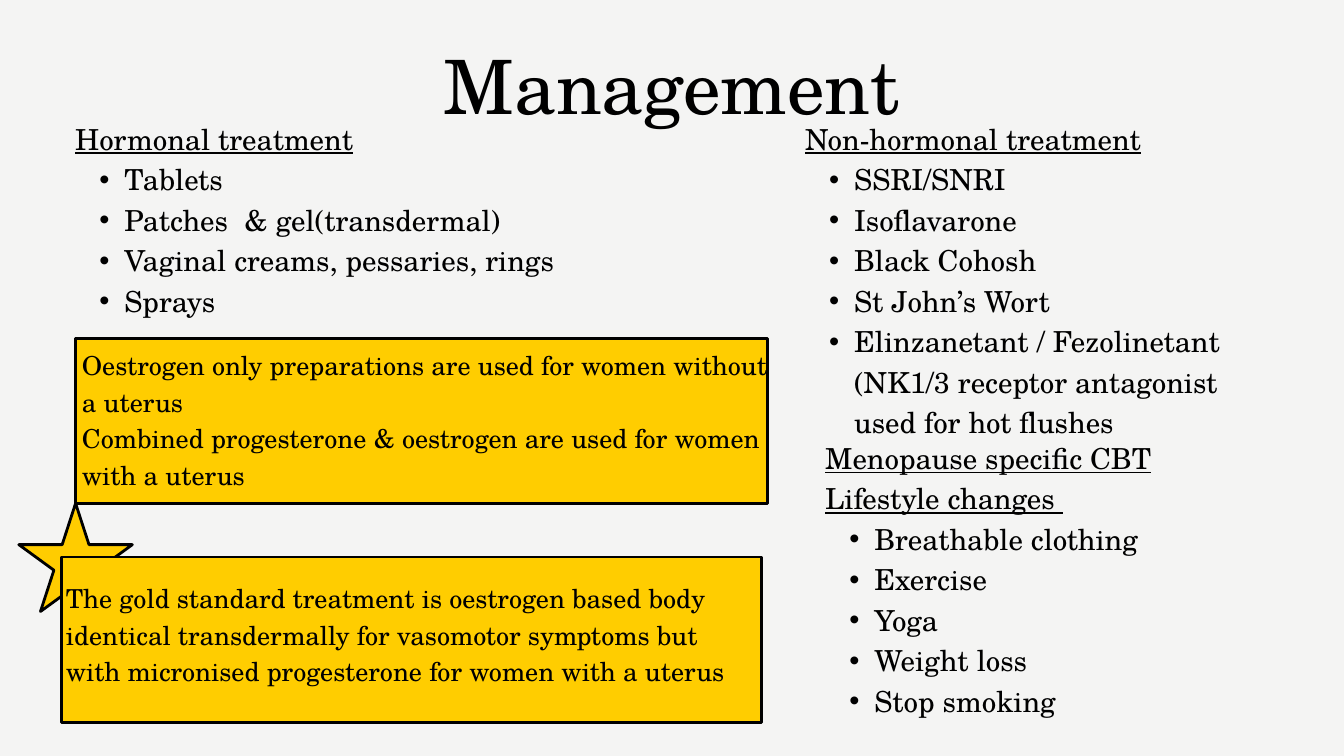
from dataclasses import dataclass

import pptx
import pptx.dml.color
import pptx.enum.shapes
import pptx.enum.text
import pptx.oxml.ns
import pptx.util
from lxml import etree

PX = 9144  # EMU per px, at 100 px to the inch
SHAPE = pptx.enum.shapes.MSO_SHAPE
ANCHOR = pptx.enum.text.MSO_ANCHOR
ALIGN = pptx.enum.text.PP_ALIGN


@dataclass(frozen=True)
class Theme:
    font: str = "TeX Gyre Schola"
    background: str = "F4F4F3"
    ink: str = "000000"
    callout: str = "FFCD00"
    star: str = "FFCC00"
    title: float = 80.3
    body: float = 31
    note: float = 28
    leading: float = 1.4
    outline: float = 3


THEME = Theme()


def rgb(value):
    return pptx.dml.color.RGBColor.from_string(value)


def emu(*lengths):
    return [pptx.util.Emu(length * PX) for length in lengths]


def set_frame(tf, inset=0, anchor=ANCHOR.TOP):
    tf.word_wrap = True
    tf.auto_size = pptx.enum.text.MSO_AUTO_SIZE.NONE
    tf.vertical_anchor = anchor
    tf.margin_left = tf.margin_top = tf.margin_right = tf.margin_bottom = emu(inset)[0]


def add_run(p, text, size, underline=False):
    p.line_spacing = pptx.util.Pt(round(size * THEME.leading, 1))
    p.space_before = pptx.util.Pt(0)
    r = p.add_run()
    r.text = text
    r.font.name = THEME.font
    r.font.size = pptx.util.Pt(size)
    r.font.color.rgb = rgb(THEME.ink)
    r.font.underline = underline


def add_bullet(p):
    p.level = 1
    pPr = p._p.get_or_add_pPr()
    pPr.set("marL", str(73 * PX))
    pPr.set("indent", str(-37 * PX))
    font = etree.SubElement(pPr, pptx.oxml.ns.qn("a:buFont"))
    font.set("typeface", "Arial")
    etree.SubElement(pPr, pptx.oxml.ns.qn("a:buChar")).set("char", "•")


def add_text_box(s, box, inset=0, anchor=ANCHOR.TOP):
    tf = s.shapes.add_textbox(*emu(*box)).text_frame
    set_frame(tf, inset, anchor)
    return tf


def add_outlined(s, kind, box, fill):
    sp = s.shapes.add_shape(kind, *emu(*box))
    sp.shadow.inherit = False
    sp.fill.solid()
    sp.fill.fore_color.rgb = rgb(fill)
    sp.line.color.rgb = rgb(THEME.ink)
    sp.line.width = pptx.util.Pt(THEME.outline)


def set_title(s, box, text):
    sp = s.shapes.title
    sp.left, sp.top, sp.width, sp.height = emu(*box)
    set_frame(sp.text_frame)
    p = sp.text_frame.paragraphs[0]
    p.alignment = ALIGN.CENTER
    add_run(p, text, THEME.title)


def add_treatment_list(s, box, heading, items=()):
    """Underlined heading with bulleted items below it."""
    tf = add_text_box(s, box)
    add_run(tf.paragraphs[0], heading, THEME.body, underline=True)
    for item in items:
        p = tf.add_paragraph()
        add_run(p, item, THEME.body)
        add_bullet(p)


def add_callout(s, box, text_offset, text_size, lines, inset=0, anchor=ANCHOR.TOP):
    """Yellow box whose text area is offset from the box's top left corner."""
    add_outlined(s, SHAPE.RECTANGLE, box, THEME.callout)
    (left, top), (dx, dy) = box[:2], text_offset
    tf = add_text_box(s, (left + dx, top + dy, *text_size), inset, anchor)
    for i, line in enumerate(lines):
        p = tf.add_paragraph() if i else tf.paragraphs[0]
        p.alignment = ALIGN.LEFT
        add_run(p, line, THEME.note)


def main():
    prs = pptx.Presentation()
    prs.slide_width, prs.slide_height = emu(2000, 1125)
    s = prs.slides.add_slide(prs.slide_layouts[5])
    s.background.fill.solid()
    s.background.fill.fore_color.rgb = rgb(THEME.background)

    set_title(s, (349, 36, 1301, 150), "Management")
    add_treatment_list(s, (112, 172, 1086, 295), "Hormonal treatment", [
        "Tablets",
        "Patches  & gel(transdermal)",
        "Vaginal creams, pessaries, rings",
        "Sprays",
    ])
    add_treatment_list(s, (1198, 172, 689, 532), "Non-hormonal treatment", [
        "SSRI/SNRI",
        "Isoflavarone",
        "Black Cohosh",
        "St John’s Wort",
        "Elinzanetant / Fezolinetant (NK1/3 receptor antagonist used for hot flushes",
    ])
    add_treatment_list(s, (1228, 647, 659, 57), "Menopause specific CBT")
    add_treatment_list(s, (1228, 707, 659, 400), "Lifestyle changes ", [
        "Breathable clothing",
        "Exercise",
        "Yoga",
        "Weight loss",
        "Stop smoking",
    ])

    add_callout(s, (112, 504, 1030, 245), (10, 8), (1050, 215), [
        "Oestrogen only preparations are used for women without a uterus",
        "Combined progesterone & oestrogen are used for women with a uterus",
    ])
    add_outlined(s, SHAPE.STAR_5_POINT, (28, 749, 169, 161), THEME.star)
    add_callout(s, (92, 829, 1041, 246), (0, -23), (1041, 270), [
        "The gold standard treatment is oestrogen based body identical transdermally "
        "for vasomotor symptoms but with micronised progesterone for women with a uterus",
    ], inset=6, anchor=ANCHOR.MIDDLE)

    prs.save("out.pptx")


if __name__ == "__main__":
    main()
